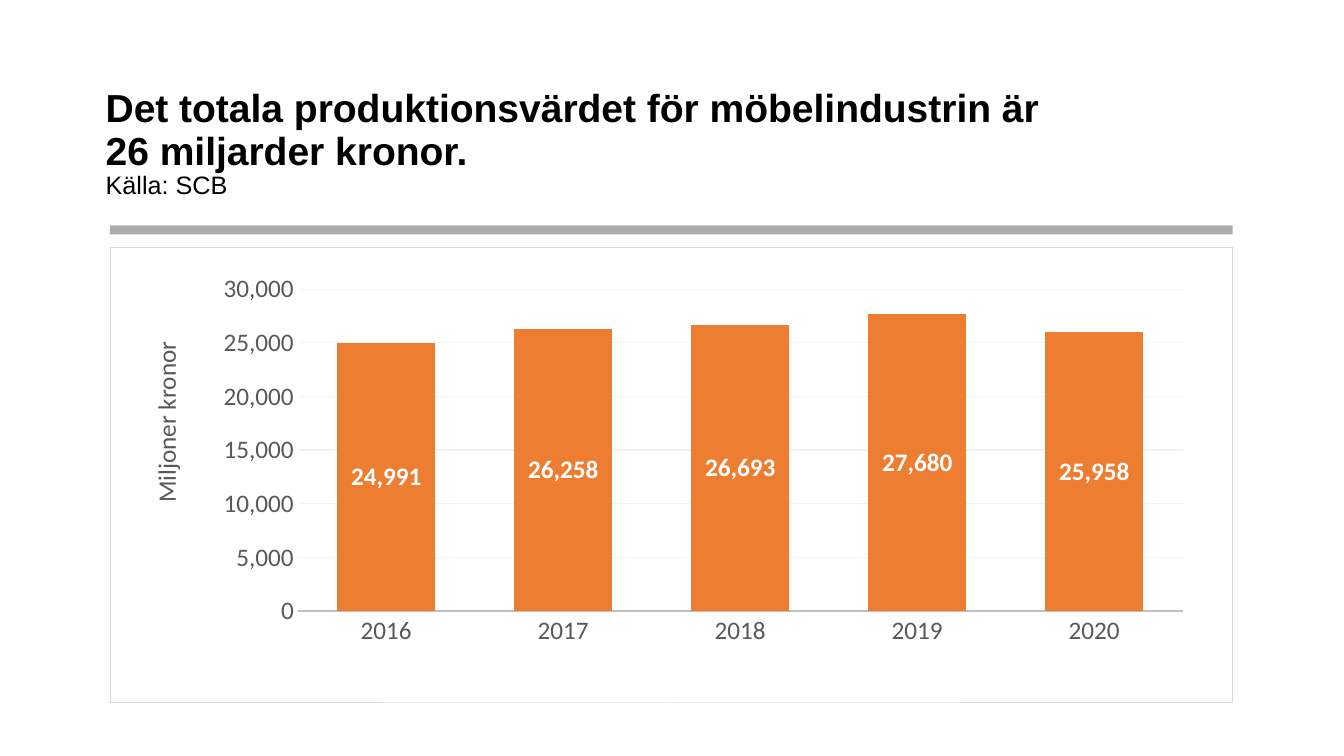
import lxml.etree
import pptx
import pptx.chart.data
import pptx.dml.color
import pptx.enum.chart
import pptx.enum.shapes
import pptx.enum.text
import pptx.oxml
import pptx.oxml.ns
import pptx.util

Pt = pptx.util.Pt
RGBColor = pptx.dml.color.RGBColor
qn = pptx.oxml.ns.qn

BLACK = RGBColor(0x00, 0x00, 0x00)
WHITE = RGBColor(0xFF, 0xFF, 0xFF)
RULE_GRAY = RGBColor(0x80, 0x80, 0x80)
LABEL_GRAY = RGBColor(0x59, 0x59, 0x59)
AXIS_GRAY = RGBColor(0xBF, 0xBF, 0xBF)
GRID_GRAY = RGBColor(0xF2, 0xF2, 0xF2)
ORANGE = RGBColor(0xED, 0x7D, 0x31)

NAMESPACES = (
    'xmlns:c="http://schemas.openxmlformats.org/drawingml/2006/chart" '
    'xmlns:a="http://schemas.openxmlformats.org/drawingml/2006/main"'
)

LEFT, WIDTH = Pt(78.5), Pt(802)
PRODUCTION = {"2016": 24991, "2017": 26258, "2018": 26693, "2019": 27680, "2020": 25958}


def format_font(font, name="Calibri", size=18, color=LABEL_GRAY, bold=False):
    font.name = name
    font.size = Pt(size)
    font.bold = bold
    font.color.rgb = color


def write_line(paragraph, text, spacing=None, **font_format):
    run = paragraph.add_run()
    run.text = text
    format_font(run.font, **font_format)
    if spacing:
        paragraph.line_spacing = Pt(spacing)


def add_heading(slide):
    heading = slide.shapes.add_textbox(Pt(68.4), Pt(62.3), Pt(823), Pt(85)).text_frame
    heading.word_wrap = True
    heading.margin_top = heading.margin_bottom = 0
    heading.vertical_anchor = pptx.enum.text.MSO_ANCHOR.TOP
    lines = [
        ("Det totala produktionsvärdet för möbelindustrin är", 27.9, True, 30.7),
        ("26 miljarder kronor.", 27.9, True, 30.7),
        ("Källa: SCB", 18, False, 18.7),
    ]
    for index, (text, size, bold, spacing) in enumerate(lines):
        paragraph = heading.add_paragraph() if index else heading.paragraphs[0]
        write_line(paragraph, text, spacing, name="Arial", size=size, color=BLACK, bold=bold)


def add_rule(slide):
    rule = slide.shapes.add_shape(
        pptx.enum.shapes.MSO_SHAPE.RECTANGLE, LEFT, Pt(161), WIDTH, Pt(6.5))
    rule.shadow.inherit = False
    rule.fill.solid()
    rule.fill.fore_color.rgb = RULE_GRAY
    rule.line.fill.background()
    # Transparency
    color = rule.fill._xPr.find(".//" + qn("a:srgbClr"))
    lxml.etree.SubElement(color, qn("a:alpha"), val="65000")


def manual_layout(x, y, size=None):
    target = '<c:layoutTarget val="inner"/>' if size else ""
    extent = '<c:w val="%s"/><c:h val="%s"/>' % size if size else ""
    return pptx.oxml.parse_xml(
        f'<c:layout {NAMESPACES}><c:manualLayout>{target}'
        f'<c:xMode val="edge"/><c:yMode val="edge"/>'
        f'<c:x val="{x}"/><c:y val="{y}"/>{extent}</c:manualLayout></c:layout>')


def place(element, layout, after=None):
    for old in element.findall(qn("c:layout")):
        element.remove(old)
    if after is None:
        element.insert(0, layout)
    else:
        after.addnext(layout)


def frame_chart(chart):
    frame = pptx.oxml.parse_xml(
        f'<c:spPr {NAMESPACES}><a:solidFill><a:srgbClr val="FFFFFF"/></a:solidFill>'
        f'<a:ln w="9525"><a:solidFill><a:srgbClr val="D9D9D9"/></a:solidFill></a:ln></c:spPr>')
    chart._chartSpace.find(qn("c:chart")).addnext(frame)


def format_axes(chart):
    years, values = chart.category_axis, chart.value_axis
    for axis in (years, values):
        axis.major_tick_mark = axis.minor_tick_mark = pptx.enum.chart.XL_TICK_MARK.NONE
        format_font(axis.tick_labels.font)
    years.format.line.color.rgb = AXIS_GRAY
    years.format.line.width = Pt(1.25)

    values.minimum_scale, values.maximum_scale, values.major_unit = 0, 30000, 5000
    values.format.line.fill.background()
    values.major_gridlines.format.line.color.rgb = GRID_GRAY
    values.major_gridlines.format.line.width = Pt(0.75)
    values.tick_labels.number_format = "#,##0"
    values.tick_labels.number_format_is_linked = False

    unit = values.axis_title
    write_line(unit.text_frame.paragraphs[0], "Miljoner kronor")
    body = unit._element.find(".//" + qn("a:bodyPr"))
    body.set("rot", "-5400000")
    body.set("vert", "horz")
    place(unit._element, manual_layout(0.03, 0.197), unit._element.find(qn("c:tx")))


def add_production_chart(slide):
    production = pptx.chart.data.CategoryChartData(number_format="#,##0")
    production.categories = list(PRODUCTION)
    production.add_series("Produktionsvärde", list(PRODUCTION.values()))
    chart = slide.shapes.add_chart(
        pptx.enum.chart.XL_CHART_TYPE.COLUMN_CLUSTERED,
        LEFT, Pt(176.5), WIDTH, Pt(326), production).chart
    chart.has_legend = False
    chart.has_title = False
    format_font(chart.font, size=9, color=BLACK)
    frame_chart(chart)
    format_axes(chart)
    place(chart._chartSpace.find(".//" + qn("c:plotArea")),
          manual_layout(0.167, 0.091, (0.789, 0.707)))

    # Columns and their values
    columns = chart.plots[0]
    columns.gap_width, columns.overlap = 80, 25
    columns.vary_by_categories = False
    series = columns.series[0]
    series.format.fill.solid()
    series.format.fill.fore_color.rgb = ORANGE
    labels = series.data_labels
    labels.show_value = True
    labels.position = pptx.enum.chart.XL_LABEL_POSITION.CENTER
    labels.number_format = "#,##0"
    labels.number_format_is_linked = False
    format_font(labels.font, color=WHITE, bold=True)


def main():
    presentation = pptx.Presentation()
    presentation.slide_width, presentation.slide_height = Pt(960), Pt(540)
    slide = presentation.slides.add_slide(presentation.slide_layouts[6])
    add_heading(slide)
    add_rule(slide)
    add_production_chart(slide)
    presentation.save("out.pptx")


if __name__ == "__main__":
    main()
